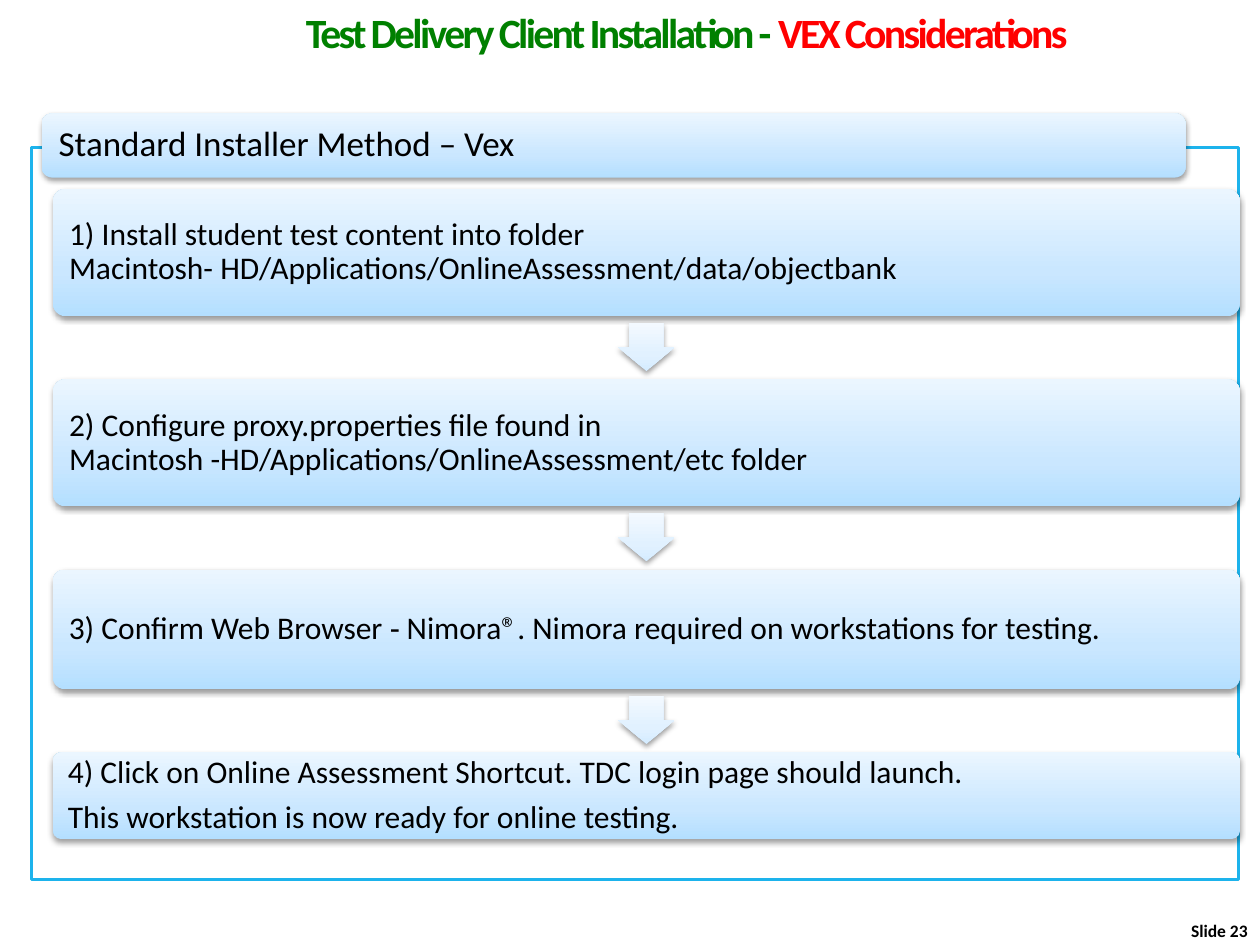
from lxml.etree import SubElement as Sub
from pptx import Presentation
from pptx.dml.color import RGBColor as RGB
from pptx.enum.shapes import MSO_SHAPE as Geo
from pptx.enum.text import MSO_ANCHOR as Anchor, PP_ALIGN as Align
from pptx.oxml.ns import qn
from pptx.util import Inches, Pt

BLACK = RGB(0x00, 0x00, 0x00)
WHITE = RGB(0xFF, 0xFF, 0xFF)
GREEN = RGB(0x00, 0x80, 0x00)
RED = RGB(0xFF, 0x00, 0x00)
CYAN = RGB(0x1D, 0xB3, 0xEC)
# Gradient colours run from the bottom to the top
BLUES = RGB(0xB4, 0xDF, 0xFF), RGB(0xCA, 0xE7, 0xFF), RGB(0xEB, 0xF6, 0xFF)
PALES = RGB(0xD5, 0xEC, 0xFF), RGB(0xE1, 0xF1, 0xFF), RGB(0xF3, 0xF9, 0xFF)
STOPS = 0, 35, 100

STEPS = [
    (1.01, ["1) Install student test content into folder\n"
            "Macintosh- HD/Applications/OnlineAssessment/data/objectbank"]),
    (1.01, ["2) Configure proxy.properties file found in\n"
            "Macintosh -HD/Applications/OnlineAssessment/etc folder"]),
    (0.95, ["3) Confirm Web Browser ‐ Nimora®. "
            "Nimora required on workstations for testing."]),
    (0.69, ["4) Click on Online Assessment Shortcut. "
            "TDC login page should launch.",
            "This workstation is now ready for online testing."]),
]
LEFT, WIDTH, TOP, GAP = 0.42, 9.42, 1.5, 0.5


class Deck:
    font = "Calibri"

    def __init__(self, wide, high):
        self.prs = Presentation()
        self.prs.slide_width = Inches(wide)
        self.prs.slide_height = Inches(high)
        self.slide = self.prs.slides.add_slide(self.prs.slide_layouts[6])

    def shape(self, geo, *box):
        item = self.slide.shapes.add_shape(geo, *map(Inches, box))
        item.shadow.inherit = False
        return item

    def frame(self, *box):
        item = self.shape(Geo.RECTANGLE, *box)
        item.fill.solid()
        item.fill.fore_color.rgb = WHITE
        item.line.color.rgb = CYAN
        item.line.width = Pt(2)

    def glossy(self, geo, tones, *box):
        """Add a shape with an upright gradient and a soft shadow below."""
        item = self.shape(geo, *box)
        item.line.fill.background()
        item.fill.gradient()
        props = item.element.spPr
        grad = props.find(qn("a:gradFill"))
        grad.set("rotWithShape", "0")
        grad.find(qn("a:lin")).set("ang", "16200000")
        stops = grad.find(qn("a:gsLst"))
        stops.clear()
        for pos, tone in zip(STOPS, tones):
            stop = Sub(stops, qn("a:gs"), pos=str(pos * 1000))
            Sub(stop, qn("a:srgbClr"), val=str(tone))
        shade = Sub(props.find(qn("a:effectLst")), qn("a:outerShdw"),
                    blurRad="40000", dist="20000", dir="5400000",
                    rotWithShape="0")
        tint = Sub(shade, qn("a:srgbClr"), val=str(BLACK))
        Sub(tint, qn("a:alpha"), val="38000")
        return item

    def run(self, para, text, size, color=BLACK, bold=False):
        run = para.add_run()
        run.text = text
        font = run.font
        font.name, font.size, font.bold = self.font, Pt(size), bold
        font.color.rgb = color
        return run

    def panel(self, box, paras, size, inset, round_by):
        item = self.glossy(Geo.ROUNDED_RECTANGLE, BLUES, *box)
        item.adjustments[0] = round_by
        frame = item.text_frame
        frame.word_wrap = True
        frame.vertical_anchor = Anchor.MIDDLE
        frame.margin_left = frame.margin_right = Inches(inset)
        frame.margin_top = frame.margin_bottom = Inches(inset)
        for i, text in enumerate(paras):
            para = frame.add_paragraph() if i else frame.paragraphs[0]
            para.alignment = Align.LEFT
            para.line_spacing = 0.9
            para.space_after = Pt(size * 0.35)
            for j, line in enumerate(text.split("\n")):
                if j:
                    para.add_line_break()
                self.run(para, line, size)

    def arrow(self, *box):
        item = self.glossy(Geo.RIGHT_ARROW, PALES, *box)
        item.adjustments[0] = 0.6
        item.adjustments[1] = 0.5
        item.rotation = 90

    def label(self, box, parts, size, align, anchor, track=0):
        """Add a bold line of (text, colour) parts, tracked in points."""
        frame = self.slide.shapes.add_textbox(*map(Inches, box)).text_frame
        frame.word_wrap = True
        frame.vertical_anchor = anchor
        para = frame.paragraphs[0]
        para.alignment = align
        for text, color in parts:
            run = self.run(para, text, size, color, True)
            if track:
                run.font._element.set("spc", str(int(track * 100)))


def main():
    deck = Deck(10, 7.5)
    deck.frame(0.25, 1.17, 9.58, 5.81)
    deck.panel((0.33, 0.9, 9.08, 0.51),
               ["Standard Installer Method – Vex"], 20, 0.11, 0.17)
    top = TOP
    for i, (high, paras) in enumerate(STEPS):
        if i:
            deck.arrow(LEFT + WIDTH / 2 - 0.19, top - GAP + 0.02, 0.38, 0.45)
        deck.panel((LEFT, top, WIDTH, high), paras, 18, 0.1, 0.1)
        top += high + GAP
    deck.label((9, 7.25, 1, 0.25), [("Slide 23", BLACK)], 10,
               Align.RIGHT, Anchor.TOP)
    deck.label((2.33, 0, 7.67, 0.5),
               [("Test Delivery Client Installation - ", GREEN),
                ("VEX Considerations", RED)], 23.8,
               Align.LEFT, Anchor.BOTTOM, -1.5)
    deck.prs.save("out.pptx")


if __name__ == "__main__":
    main()
